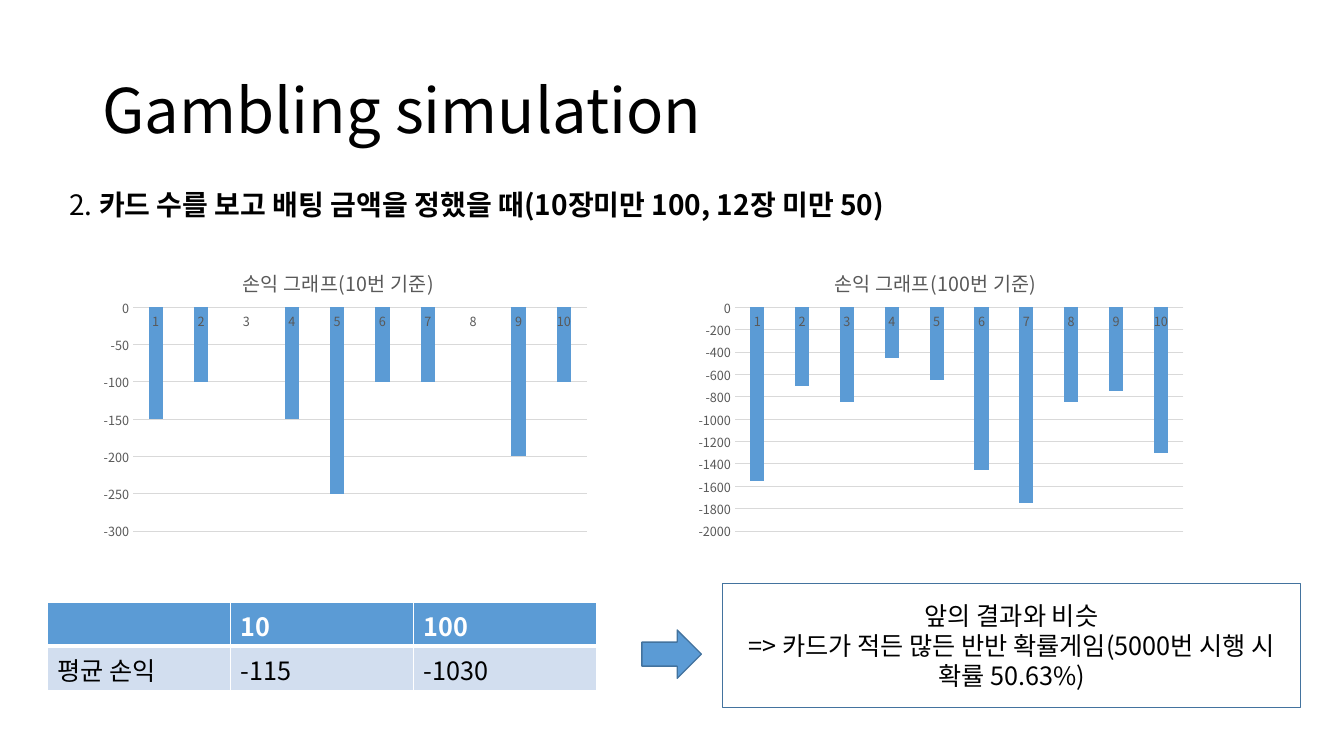
"""Builds the gambling simulation slide with two loss charts and a summary."""
from lxml.etree import SubElement as Sub
from pptx import Presentation
from pptx.chart.data import CategoryChartData as Data
from pptx.dml.color import RGBColor as Rgb
from pptx.enum.chart import XL_CHART_TYPE as Kind, XL_TICK_MARK as Tick
from pptx.enum.shapes import MSO_SHAPE as Form
from pptx.enum.text import MSO_ANCHOR as Anchor, PP_ALIGN as Align
from pptx.oxml.ns import qn
from pptx.util import Pt

FONT = "Noto Sans CJK KR"
HUES = {
    "ink": "000000", "paper": "FFFFFF", "blue": "5B9BD5", "edge": "43739E",
    "pale": "D2DEEF", "gray": "595959", "grid": "D9D9D9",
}


class Deck:
    def __init__(self, wide, high):
        self.show = Presentation()
        self.show.slide_width, self.show.slide_height = Pt(wide), Pt(high)
        self.slide = self.show.slides.add_slide(self.show.slide_layouts[6])
        self.shapes = self.slide.shapes

    def hue(self, name):
        return Rgb.from_string(HUES[name])

    def style(self, font, size, hue="ink", bold=False):
        font.size, font.bold, font.name = Pt(size), bold, FONT
        font.color.rgb = self.hue(hue)
        Sub(font._rPr, qn("a:ea"), typeface=FONT)

    def fill_in(self, para, runs, size, hue="ink"):
        for words, bold in runs:
            run = para.add_run()
            run.text = words
            self.style(run.font, size, hue, bold)

    def text(self, box, runs, size, anchor=Anchor.TOP, before=0):
        frame = self.shapes.add_textbox(*map(Pt, box)).text_frame
        frame.word_wrap, frame.vertical_anchor = True, anchor
        para = frame.paragraphs[0]
        para.line_spacing, para.space_before = 0.9, Pt(before)
        self.fill_in(para, runs, size)

    def shape(self, form, box, fill=None, lines=()):
        item = self.shapes.add_shape(form, *map(Pt, box))
        item.shadow.inherit = False
        if fill:
            item.fill.solid()
            item.fill.fore_color.rgb = self.hue(fill)
        else:
            item.fill.background()
        item.line.color.rgb, item.line.width = self.hue("edge"), Pt(1)
        frame = item.text_frame
        frame.word_wrap, frame.vertical_anchor = True, Anchor.MIDDLE
        for at, words in enumerate(lines):
            para = frame.add_paragraph() if at else frame.paragraphs[0]
            para.alignment = Align.CENTER
            self.fill_in(para, [(words, False)], 18)

    def place(self, node, spots, inner=False):
        for old in node.findall(qn("c:layout")):
            node.remove(old)
        outer = Sub(node, qn("c:layout"))
        if inner:
            node.insert(0, outer)
        else:
            node.find(qn("c:tx")).addnext(outer)
        hand = Sub(outer, qn("c:manualLayout"))
        if inner:
            Sub(hand, qn("c:layoutTarget"), val="inner")
        for key in ("xMode", "yMode"):
            Sub(hand, qn("c:" + key), val="edge")
        for key, val in zip("xywh", spots):
            Sub(hand, qn("c:" + key), val=str(val))

    def chart(self, box, title, vals, low, step, head, plot):
        data = Data()
        data.categories = [str(num + 1) for num in range(len(vals))]
        data.add_series("Series 1", vals)
        chart = self.shapes.add_chart(
            Kind.COLUMN_CLUSTERED, *map(Pt, box), data).chart
        self.style(chart.font, 10)
        chart.has_legend, chart.has_title = False, True
        para = chart.chart_title.text_frame.paragraphs[0]
        self.fill_in(para, [(title, False)], 14, "gray")
        chart.chart_title.include_in_layout = False
        self.place(chart.chart_title._element, head)
        self.place(chart._chartSpace.chart.plotArea, plot, True)
        bars = chart.plots[0]
        bars.gap_width, bars.overlap, bars.vary_by_categories = 219, -27, False
        fill = bars.series[0].format.fill
        fill.solid()
        fill.fore_color.rgb = self.hue("blue")
        bars.series[0].invert_if_negative = False
        cats, axis = chart.category_axis, chart.value_axis
        for each in (cats, axis):
            each.major_tick_mark = each.minor_tick_mark = Tick.NONE
            self.style(each.tick_labels.font, 9, "gray")
        axis.minimum_scale, axis.maximum_scale = low, 0
        axis.major_unit = step
        axis.format.line.fill.background()
        for line in (cats.format.line, axis.major_gridlines.format.line):
            line.color.rgb, line.width = self.hue("grid"), Pt(0.75)

    def edge(self, cell, side, width):
        line = Sub(cell._tc.get_or_add_tcPr(), qn("a:ln" + side),
                   w=str(Pt(width)))
        Sub(Sub(line, qn("a:solidFill")), qn("a:srgbClr"), val=HUES["paper"])

    def table(self, box, rows):
        grid = self.shapes.add_table(
            len(rows), len(rows[0]), *map(Pt, box)).table
        for top, row in enumerate(rows):
            first = top == 0
            for left, words in enumerate(row):
                cell = grid.cell(top, left)
                for side in "LRTB":
                    thick = side == ("B" if first else "T")
                    self.edge(cell, side, 3 if thick else 1)
                cell.fill.solid()
                cell.fill.fore_color.rgb = self.hue("blue" if first else "pale")
                if words:
                    self.fill_in(cell.text_frame.paragraphs[0], [(words, first)],
                                 18, "paper" if first else "ink")


def main():
    deck = Deck(960, 540)
    deck.text((66, 28.75, 828, 104.4), [("Gambling simulation", False)],
              44, Anchor.MIDDLE)
    deck.text((42.5, 133.2, 828, 342.7), [
        ("2. ", False),
        ("카드 수를 보고 배팅 금액을 정했을 때(10장미만 100, 12장 미만 50)", True),
    ], 20, before=10)
    deck.chart((66.25, 174.25, 360, 216), "손익 그래프(10번 기준)",
               (-150, -100, 0, -150, -250, -100, -100, 0, -200, -100),
               -300, 50, (0.29, 0.06), (0.08, 0.21, 0.9, 0.74))
    deck.chart((492.5, 174.25, 360, 216), "손익 그래프(100번 기준)",
               (-1550, -700, -850, -450, -650, -1450, -1750, -850, -750, -1300),
               -2000, 200, (0.28, 0.06), (0.09, 0.21, 0.89, 0.74))
    deck.table((34, 430, 392.4, 63.4),
               (("", "10", "100"), ("평균 손익", "-115", "-1030")))
    deck.shape(Form.RIGHT_ARROW, (458.5, 450, 42.5, 34.5), "blue")
    deck.shape(Form.RECTANGLE, (516.2, 416.9, 412.6, 88.5), lines=(
        "앞의 결과와 비슷",
        "=> 카드가 적든 많든 반반 확률게임(5000번 시행 시 확률 50.63%)"))
    deck.show.save("out.pptx")


if __name__ == "__main__":
    main()
